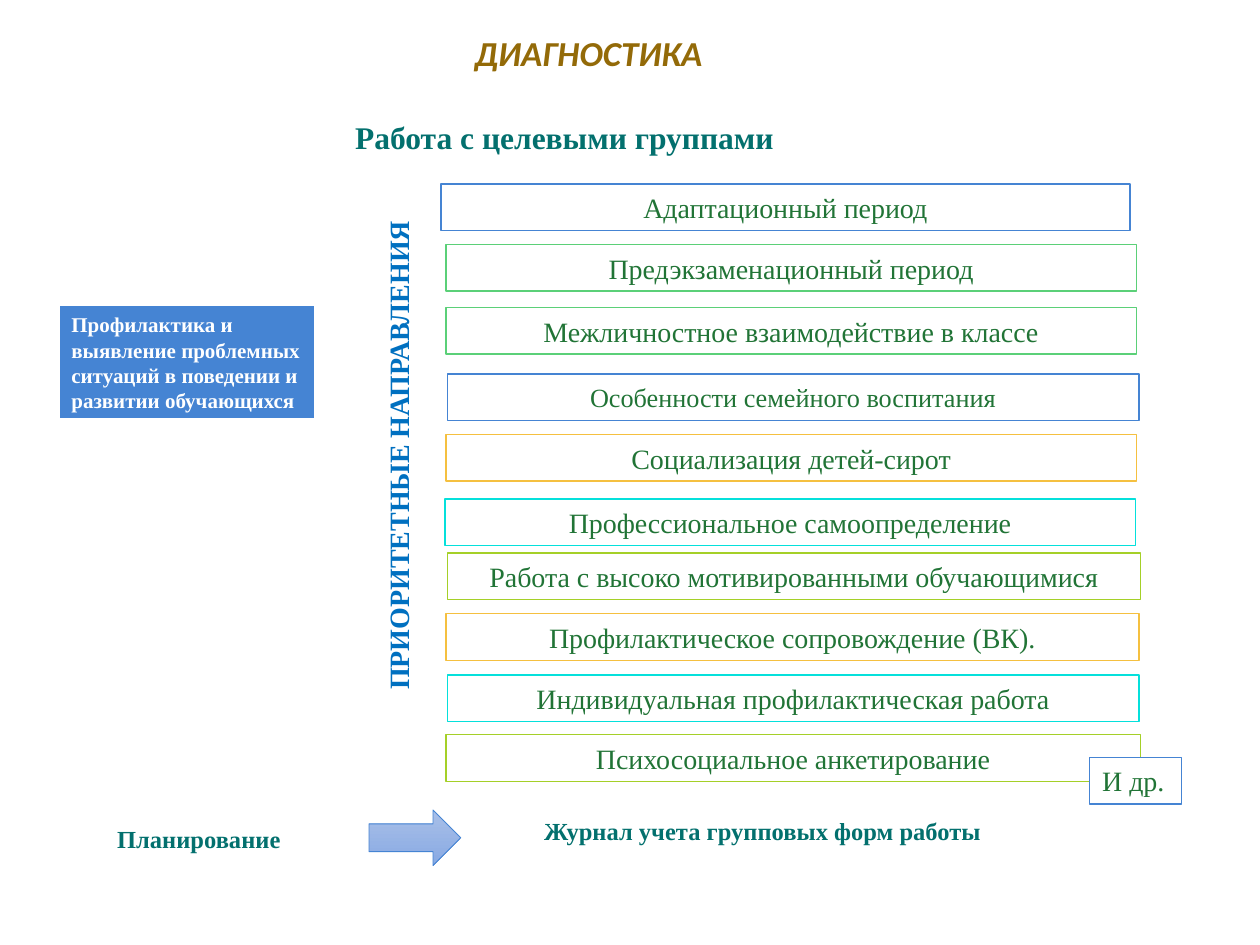
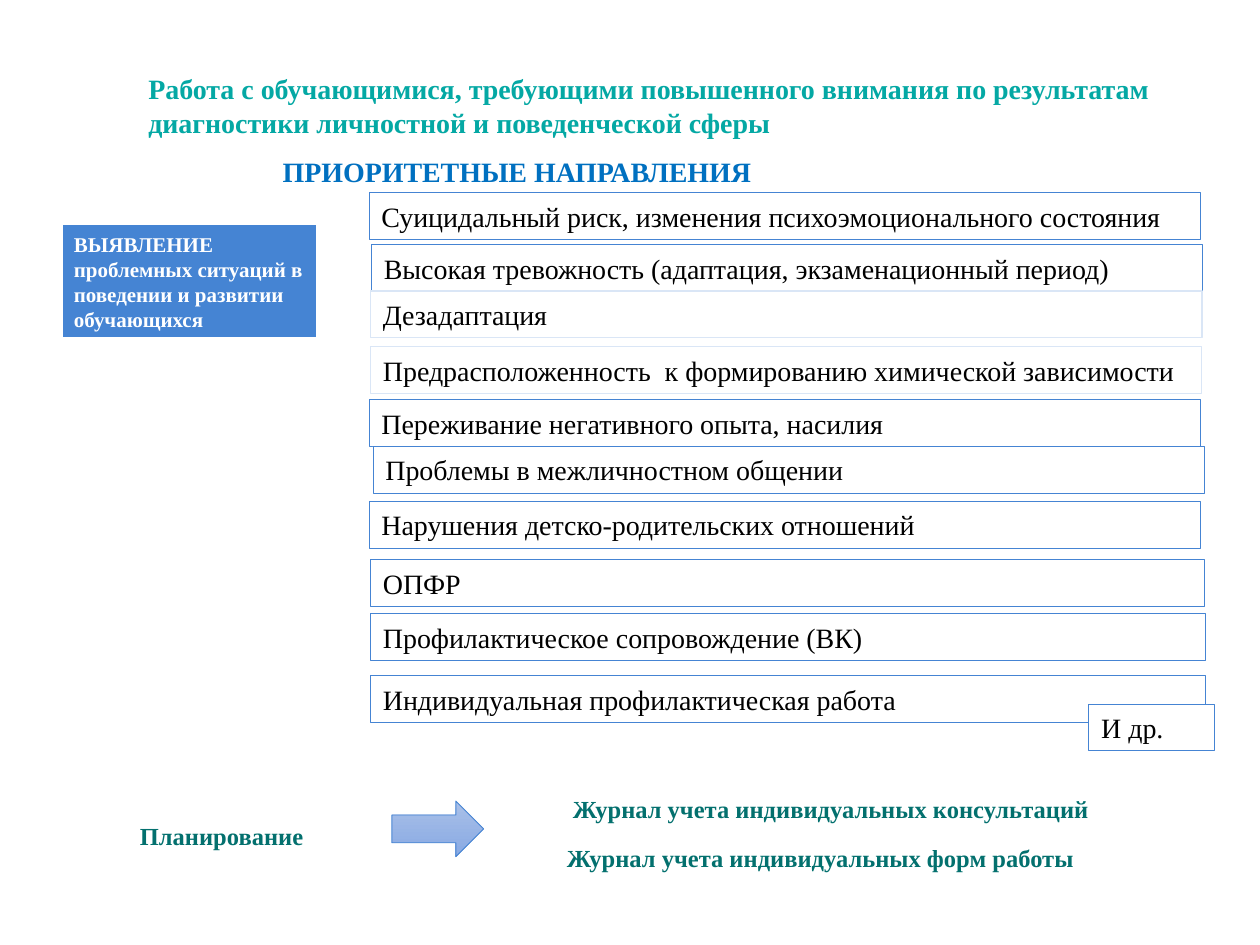
from pptx import Presentation
from pptx.dml.color import RGBColor
from pptx.enum.shapes import MSO_SHAPE
from pptx.enum.text import MSO_ANCHOR, MSO_AUTO_SIZE, PP_ALIGN
from pptx.util import Cm, Pt

WHITE = RGBColor(0xFF, 0xFF, 0xFF)
BLACK = RGBColor(0x00, 0x00, 0x00)
BLUE = RGBColor(0x45, 0x84, 0xD3)
PALE_BLUE = RGBColor(0xDA, 0xE6, 0xF6)
HEADING_BLUE = RGBColor(0x00, 0x70, 0xC0)
GREEN = RGBColor(0x5B, 0xD0, 0x78)
LIME = RGBColor(0xA5, 0xD0, 0x28)
YELLOW = RGBColor(0xF5, 0xC0, 0x40)
CYAN = RGBColor(0x05, 0xE0, 0xDB)
DARK_GREEN = RGBColor(0x21, 0x74, 0x36)
TEAL = RGBColor(0x03, 0x70, 0x6E)
LIGHT_TEAL = RGBColor(0x04, 0xA8, 0xA4)
BROWN = RGBColor(0x93, 0x6A, 0x08)
ARROW_TOP = RGBColor(0xA9, 0xC0, 0xE8)
ARROW_BOTTOM = RGBColor(0x88, 0xA9, 0xE3)

SERIF = "Times New Roman"
ROW_HEIGHT = 0.94
PRIORITIES = "ПРИОРИТЕТНЫЕ НАПРАВЛЕНИЯ"
LEFT, CENTER = PP_ALIGN.LEFT, PP_ALIGN.CENTER

# Rows: text, left and top within the list, width, line colour, line width, text size
GROUP_ROWS = [
    ("Адаптационный период", 0, 0, 13.89, BLUE, 1, 16),
    ("Предэкзаменационный период", 0.1, 1.22, 13.92, GREEN, 1, 16),
    ("Межличностное взаимодействие в классе", 0.1, 2.49, 13.92, GREEN, 0.75, 16),
    ("Особенности семейного воспитания", 0.13, 3.83, 13.94, BLUE, 0.75, 15),
    ("Социализация детей-сирот", 0.1, 5.05, 13.92, YELLOW, 0.75, 16),
    ("Профессиональное самоопределение", 0.08, 6.35, 13.92, CYAN, 0.75, 16),
    ("Работа с высоко мотивированными обучающимися", 0.13, 7.44, 13.97, LIME, 0.75, 16),
    ("Профилактическое сопровождение (ВК).", 0.1, 8.66, 13.97, YELLOW, 0.75, 16),
    ("Индивидуальная профилактическая работа", 0.13, 9.9, 13.94, CYAN, 0.75, 16),
    ("Психосоциальное анкетирование", 0.1, 11.1, 14, LIME, 0.75, 16),
]
ATTENTION_ROWS = [
    ("Суицидальный риск, изменения психоэмоционального состояния",
     0, 0, 16.76, BLUE, 0.5, 16),
    ("Высокая тревожность (адаптация, экзаменационный период)",
     0.05, 1.04, 16.76, BLUE, 0.5, 16),
    ("Дезадаптация", 0.03, 1.98, 16.76, PALE_BLUE, 0.75, 16),
    ("Предрасположенность  к формированию химической зависимости",
     0.03, 3.1, 16.76, PALE_BLUE, 0.5, 16),
    ("Переживание негативного опыта, насилия", 0, 4.17, 16.76, BLUE, 0.5, 16),
    ("Проблемы в межличностном общении", 0.08, 5.11, 16.76, BLUE, 0.5, 16),
    ("Нарушения детско-родительских отношений", 0, 6.22, 16.76, BLUE, 0.5, 16),
    ("ОПФР", 0.03, 7.39, 16.81, BLUE, 0.5, 16),
    ("Профилактическое сопровождение (ВК)", 0.03, 8.48, 16.84, BLUE, 0.5, 16),
    ("Индивидуальная профилактическая работа", 0.03, 9.73, 16.84, BLUE, 0.5, 16),
]


def write(shape, text, size, color, bold=False, align=LEFT):
    frame = shape.text_frame
    frame.word_wrap = True
    frame.auto_size = MSO_AUTO_SIZE.SHAPE_TO_FIT_TEXT
    frame.text = text
    para = frame.paragraphs[0]
    para.alignment = align
    font = para.runs[0].font
    font.name, font.size, font.bold = SERIF, Pt(size), bold
    font.color.rgb = color
    return font


def add_label(page, box, text, size, color, align=LEFT):
    label = page.shapes.add_textbox(*map(Cm, box))
    write(label, text, size, color, True, align)
    return label


def add_shape(page, kind, box, line_color, line_width):
    shape = page.shapes.add_shape(kind, *map(Cm, box))
    shape.shadow.inherit = False
    shape.line.color.rgb = line_color
    shape.line.width = Pt(line_width)
    return shape


def add_panel(page, box, fill, line_color, line_width):
    panel = add_shape(page, MSO_SHAPE.RECTANGLE, box, line_color, line_width)
    panel.fill.solid()
    panel.fill.fore_color.rgb = fill
    panel.text_frame.vertical_anchor = MSO_ANCHOR.MIDDLE
    return panel


def add_goal(page, left, top, text):
    panel = add_panel(page, (left, top, 5.16, 2.31), BLUE, WHITE, 1.5)
    write(panel, text, 12, WHITE, True)


def add_directions(page, left, top, rows, color, align, others):
    """Framed directions, closed by a small overlapping tag."""
    for text, dx, dy, width, line_color, line_width, size in rows:
        box = (left + dx, top + dy, width, ROW_HEIGHT)
        write(add_panel(page, box, WHITE, line_color, line_width),
              text, size, color, align=align)
    dx, dy, width = others
    tag = add_panel(page, (left + dx, top + dy, width, ROW_HEIGHT),
                    WHITE, BLUE, rows[-1][5])
    write(tag, "И др.", 16, color)


def add_planning(page, left, top, arrow_rise, journals):
    """Planning label, arrow and the journals it leads to."""
    add_label(page, (left, top, 5.46, 0.86), "Планирование", 14, TEAL)
    arrow = add_shape(page, MSO_SHAPE.RIGHT_ARROW,
                      (left + 5.33, top - arrow_rise, 1.85, 1.12), BLUE, 0.5)
    arrow.fill.gradient()
    arrow.fill.gradient_angle = 270
    for stop, color in zip(arrow.fill.gradient_stops, (ARROW_TOP, ARROW_BOTTOM)):
        stop.color.rgb = color
    for text, dx, dy, width in journals:
        add_label(page, (left + dx, top + dy, width, 0.86), text, 14, TEAL)


def build_groups(page):
    # Headings
    heading = page.shapes.add_textbox(Cm(9.32), Cm(0.51), Cm(5.92), Cm(1.12))
    font = write(heading, "ДИАГНОСТИКА", 20, BROWN, True)
    font.name, font.italic = "Calibri", True
    add_label(page, (6.91, 2.26, 9.78, 1.02), "Работа с целевыми группами", 18, TEAL)
    side_title = add_label(page, (2.57, 8.71, 10.92, 0.94), PRIORITIES, 16,
                           HEADING_BLUE, CENTER)
    side_title.rotation = 270
    # Content
    add_goal(page, 1.19, 6.15, "Профилактика и выявление проблемных ситуаций "
             "в поведении и развитии обучающихся")
    add_directions(page, 8.89, 3.71, GROUP_ROWS, DARK_GREEN, CENTER,
                   (13.08, 11.56, 1.85))
    add_planning(page, 2.11, 16.48, 0.15, [
        ("Журнал учета групповых форм работы", 8.61, -0.15, 11.94)])


def build_attention(page):
    # Headings
    add_label(page, (2.74, 1.32, 21.49, 1.63),
              "Работа с обучающимися, требующими повышенного внимания по результатам "
              "диагностики личностной и поведенческой сферы", 16, LIGHT_TEAL)
    add_label(page, (4.95, 3, 10.95, 0.94), PRIORITIES, 16, HEADING_BLUE, CENTER)
    # Content
    add_goal(page, 1.24, 4.52, "ВЫЯВЛЕНИЕ проблемных ситуаций "
             "в поведении и развитии обучающихся")
    add_directions(page, 7.44, 3.89, ATTENTION_ROWS, BLACK, LEFT,
                   (14.51, 10.31, 2.54))
    add_planning(page, 2.57, 16.43, 0.28, [
        ("Журнал учета индивидуальных консультаций", 8.73, -0.55, 12.04),
        ("Журнал учета индивидуальных форм работы", 8.61, 0.44, 10.77)])


def main():
    deck = Presentation()
    deck.slide_width, deck.slide_height = Cm(25.4), Cm(19.05)
    for build in (build_groups, build_attention):
        build(deck.slides.add_slide(deck.slide_layouts[6]))
    deck.save("out.pptx")


if __name__ == "__main__":
    main()
